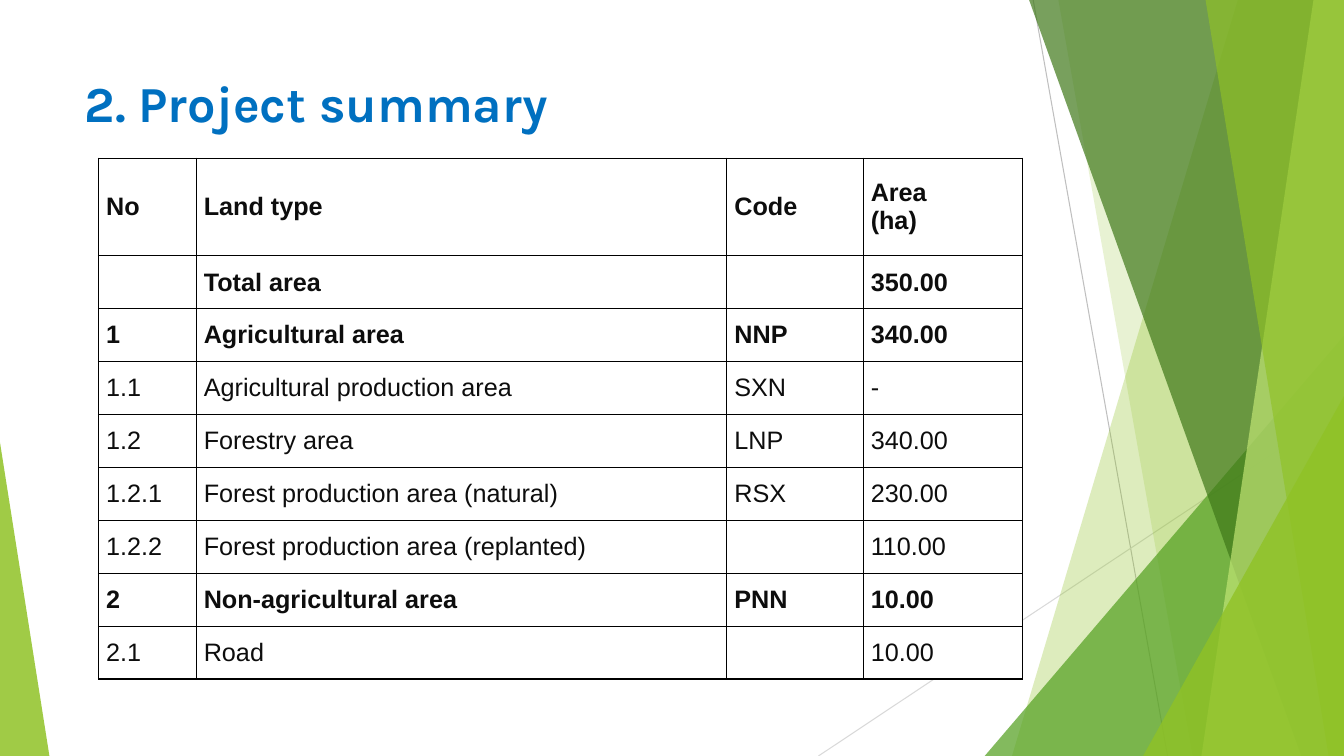
"""Build the project summary slide with its land area table."""
import pptx
import pptx.util
import pptx.dml.color
import pptx.enum.shapes
import pptx.enum.text
import pptx.oxml
import pptx.oxml.ns

Pt = pptx.util.Pt
WIDTH, HEIGHT = 960, 540
COLORS = {
    "title": "0070C0", "text": "0D0D0D", "border": "000000", "cell": "FFFFFF",
    "gray": "BFBFBF", "pale gray": "D9D9D9", "lime": "90C226",
    "green": "54A021", "forest": "3F7819", "light lime": "C0E474",
}
TITLE = "2. Project summary"
ROWS = [
    ("No", "Land type", "Code", "Area\v(ha)"),
    ("", "Total area", "", "350.00"),
    ("1", "Agricultural area", "NNP", "340.00"),
    ("1.1", "Agricultural production area", "SXN", "-"),
    ("1.2", "Forestry area", "LNP", "340.00"),
    ("1.2.1", "Forest production area (natural)", "RSX", "230.00"),
    ("1.2.2", "Forest production area (replanted)", "", "110.00"),
    ("2", "Non-agricultural area", "PNN", "10.00"),
    ("2.1", "Road", "", "10.00"),
]
BOLD_ROWS = {0, 1, 2, 7}
COLUMN_WIDTHS = [69.8, 379, 97.4, 113.6]
HEADER_HEIGHT, ROW_HEIGHT = 69.8, 37.8
TABLE_LEFT, TABLE_TOP = 70.4, 113

LINES = [
    ((738, 0), (834, HEIGHT), "gray"),
    ((WIDTH, 290.2), (584.6, HEIGHT), "pale gray"),
]
FACETS = [
    ("band", (884.2, 722.9), "lime", 30),
    ("band", (756, 851.8), "lime", 20),
    ("triangle", (703.4, 239.8, 256.6, 1), "green", 72),
    ("band", (735.1, 929.5), "forest", 70),
    ("band", (938.2, 858.2), "light lime", 70),
    ("band", (861.1, 949), "lime", 65),
    ("triangle", (816.5, 283, 143.5, 1), "lime", 80),
    ("triangle", (0, 316.1, 35.3, 0), "lime", 85),
]


def rgb(name):
    return pptx.dml.color.RGBColor.from_string(COLORS[name])


def write_text(para, text, font, size, color, bold=False, align=None):
    para.text = text
    para.alignment = align
    for span in para.runs:
        span.font.name = font
        span.font.size = Pt(size)
        span.font.bold = bold
        span.font.color.rgb = rgb(color)


def add_line(slide, start, end, color):
    line = slide.shapes.add_connector(
        pptx.enum.shapes.MSO_CONNECTOR.STRAIGHT, *map(Pt, start + end))
    line.line.color.rgb = rgb(color)
    line.line.width = Pt(0.75)
    properties = line._element.spPr
    properties.append(properties.makeelement(pptx.oxml.ns.qn("a:effectLst"), {}))


def add_facet(slide, kind, place, color, opacity):
    if kind == "band":
        top_x, bottom_x = place
        builder = slide.shapes.build_freeform(Pt(top_x), 0)
        corners = [(WIDTH, 0), (WIDTH, HEIGHT), (bottom_x, HEIGHT)]
        builder.add_line_segments([(Pt(x), Pt(y)) for x, y in corners])
        facet = builder.convert_to_shape()
    else:
        left, top, width, apex = place
        facet = slide.shapes.add_shape(
            pptx.enum.shapes.MSO_SHAPE.ISOSCELES_TRIANGLE,
            Pt(left), Pt(top), Pt(width), Pt(HEIGHT - top))
        facet.adjustments[0] = apex
    facet.shadow.inherit = False
    facet.line.fill.background()
    facet.fill.solid()
    facet.fill.fore_color.rgb = rgb(color)
    tint = facet._element.spPr.find(".//" + pptx.oxml.ns.qn("a:srgbClr"))
    tint.append(tint.makeelement(
        pptx.oxml.ns.qn("a:alpha"), {"val": str(opacity * 1000)}))


def add_borders(cell):
    properties = cell._tc.get_or_add_tcPr()
    for position, side in enumerate("LRTB"):
        properties.insert(position, pptx.oxml.parse_xml(
            f'<a:ln{side} {pptx.oxml.ns.nsdecls("a")} w="12700"><a:solidFill>'
            f'<a:srgbClr val="{COLORS["border"]}"/></a:solidFill></a:ln{side}>'))


def add_land_table(slide):
    heights = [HEADER_HEIGHT] + [ROW_HEIGHT] * (len(ROWS) - 1)
    frame = slide.shapes.add_table(
        len(ROWS), len(COLUMN_WIDTHS), Pt(TABLE_LEFT), Pt(TABLE_TOP),
        Pt(sum(COLUMN_WIDTHS)), Pt(sum(heights)))
    table = frame.table
    table.first_row = table.horz_banding = False
    for column, width in zip(table.columns, COLUMN_WIDTHS):
        column.width = Pt(width)
    for row_index, (row, height) in enumerate(zip(table.rows, heights)):
        row.height = Pt(height)
        for cell, text in zip(row.cells, ROWS[row_index]):
            cell.fill.solid()
            cell.fill.fore_color.rgb = rgb("cell")
            cell.margin_left = cell.margin_right = Pt(5.4)
            cell.margin_top = cell.margin_bottom = 0
            cell.vertical_anchor = pptx.enum.text.MSO_ANCHOR.MIDDLE
            add_borders(cell)
            if text:
                write_text(cell.text_frame.paragraphs[0], text, font="Arial",
                           size=18, color="text", bold=row_index in BOLD_ROWS,
                           align=pptx.enum.text.PP_ALIGN.JUSTIFY)


def add_title(slide):
    title = slide.shapes.title
    title.left, title.top, title.width, title.height = map(
        Pt, (53.3, 48.2, 676.8, 65.5))
    frame = title.text_frame
    frame.word_wrap = True
    frame.auto_size = pptx.enum.text.MSO_AUTO_SIZE.NONE
    frame.vertical_anchor = pptx.enum.text.MSO_ANCHOR.TOP
    write_text(frame.paragraphs[0], TITLE, font="Karla", size=36, color="title",
               bold=True, align=pptx.enum.text.PP_ALIGN.LEFT)


def main():
    deck = pptx.Presentation()
    deck.slide_width, deck.slide_height = Pt(WIDTH), Pt(HEIGHT)
    slide = deck.slides.add_slide(deck.slide_layouts[5])
    for line in LINES:
        add_line(slide, *line)
    for facet in FACETS:
        add_facet(slide, *facet)
    add_title(slide)
    add_land_table(slide)
    deck.save("out.pptx")


if __name__ == "__main__":
    main()
